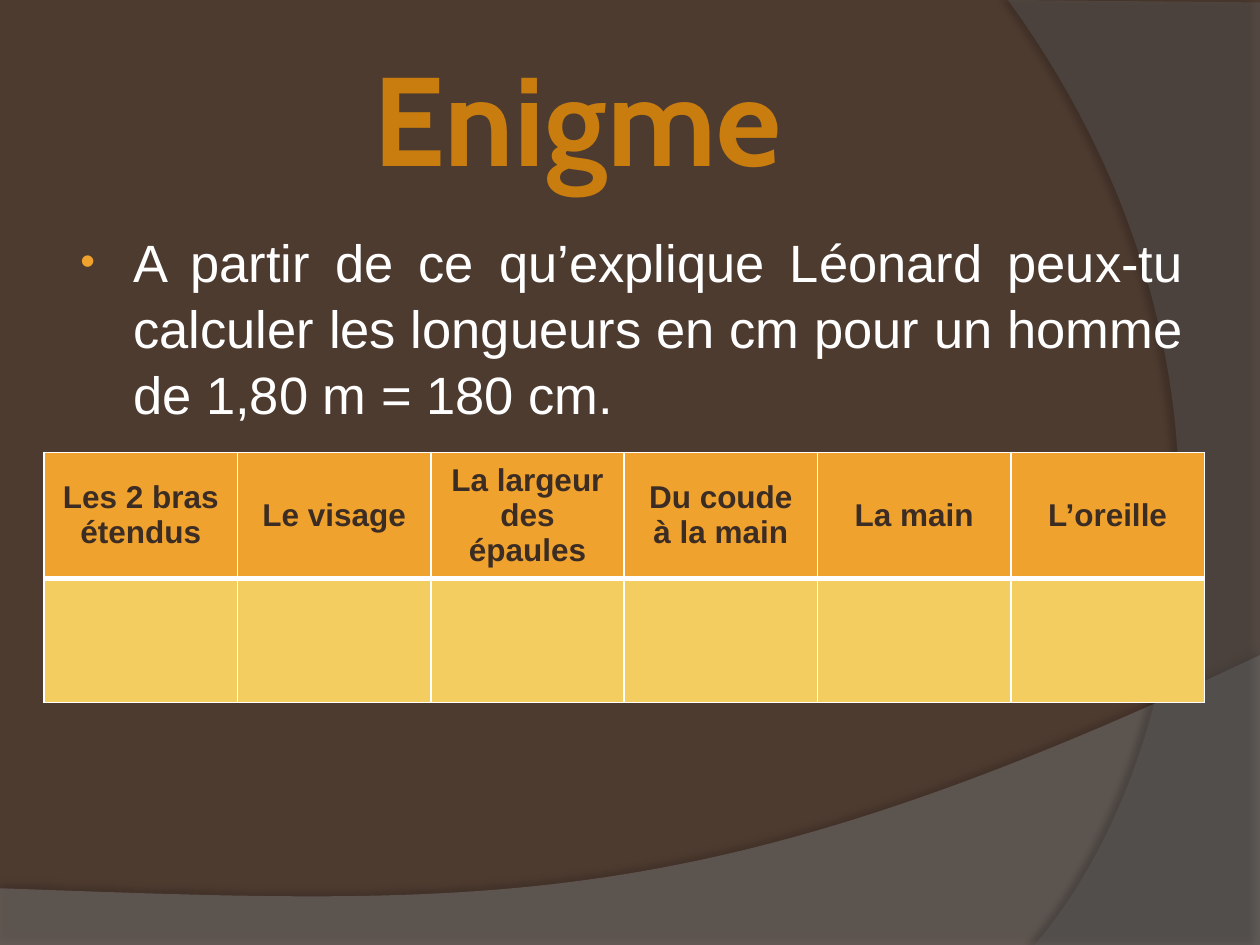
from lxml.etree import SubElement
from pptx import Presentation
from pptx.dml.color import RGBColor
from pptx.enum.text import MSO_ANCHOR as ANCHOR, PP_ALIGN as ALIGN
from pptx.oxml.ns import qn
from pptx.util import Inches, Pt

BACKGROUND, WHITE, ORANGE = "4E3B30", "FFFFFF", "F0A22E"
HEADINGS = ["Les 2 bras\nétendus", "Le visage", "La largeur des épaules",
            "Du coude à la main", "La main", "L’oreille"]


def paint(color, value):
    """Give a colour object a hex value."""
    color.rgb = RGBColor.from_string(value)


def add(parent, tag, **attrs):
    """Append a drawing element with attributes."""
    return SubElement(parent, qn(f"a:{tag}"), {k: str(v) for k, v in attrs.items()})


def write(tf, text, size, color, font="Arial", bold=False, align=ALIGN.CENTER, spacing=None):
    """Fill a text frame, one paragraph for each line."""
    for i, line in enumerate(text.split("\n")):
        p = tf.add_paragraph() if i else tf.paragraphs[0]
        p.alignment, p.line_spacing = align, spacing
        r = p.add_run()
        r.text = line
        r.font.size, r.font.name, r.font.bold = Pt(size), font, bold
        paint(r.font.color, color)


def curve(points, steps=60):
    """Return points along a cubic Bezier curve."""
    weights = [((1 - t) ** 3, 3 * t * (1 - t) ** 2, 3 * t * t * (1 - t), t ** 3)
               for t in (i / steps for i in range(steps + 1))]
    return [tuple(sum(w * p[axis] for w, p in zip(ws, points)) for axis in (0, 1))
            for ws in weights]


def add_wave(s, outline, color, opacity, shadow_opacity, distance, direction):
    """Draw a translucent curved area with a soft shadow."""
    points = [(Inches(x), Inches(y)) for x, y in outline]
    builder = s.shapes.build_freeform(*points[0], scale=1.0)
    builder.add_line_segments(points[1:], close=True)
    sp = builder.convert_to_shape()
    sp.shadow.inherit = False
    sp.fill.solid()
    paint(sp.fill.fore_color, color)
    sp.line.fill.background()
    props = sp.element.spPr
    add(props.find(f".//{qn('a:srgbClr')}"), "alpha", val=opacity * 1000)
    shadow = add(props.find(qn("a:effectLst")), "outerShdw", blurRad=Pt(4),
                 dist=Pt(distance), dir=direction * 60000, algn="ctr", rotWithShape=0)
    add(add(shadow, "srgbClr", val="000000"), "alpha", val=shadow_opacity * 1000)


def add_backdrop(s, width, height):
    """Draw the background and its two waves."""
    s.background.fill.solid()
    paint(s.background.fill.fore_color, BACKGROUND)
    floor = curve([(width, 5.2), (5.59, 7.29), (3.91, 7.19), (0, 7.05)])
    add_wave(s, [(0, height), (width, height)] + floor, "7F7F7F", 45, 35, 3.5, 270)
    side = curve([(8.21, height), (9.35, 6.19), (10.18, 3), (8, 0)])
    add_wave(s, [(width, 0.02), (width, height)] + side, "5E5E5E", 40, 45, 4, 180)


def add_text(s, box, text, size, color, anchor=ANCHOR.TOP, **style):
    """Place a wrapping text box and return its frame."""
    tf = s.shapes.add_textbox(*map(Inches, box)).text_frame
    tf.word_wrap, tf.vertical_anchor = True, anchor
    write(tf, text, size, color, **style)
    return tf


def add_question(s, box):
    """Place the bulleted, justified question."""
    text = ("A partir de ce qu’explique Léonard peux-tu calculer les longueurs "
            "en cm pour un homme de 1,80 m = 180 cm.")
    tf = add_text(s, box, text, 30, WHITE, align=ALIGN.JUSTIFY, spacing=1.05)
    props = tf.paragraphs[0]._p.get_or_add_pPr()
    props.set("marL", str(Inches(0.46)))
    props.set("indent", str(Inches(-0.42)))
    add(add(props, "buClr"), "srgbClr", val=ORANGE)
    add(props, "buSzPct", val=80000)
    add(props, "buFont", typeface="Arial")
    add(props, "buChar", char="•")


def style_cell(cell, fill, widths):
    """Fill a cell and give its sides white borders."""
    props = cell._tc.get_or_add_tcPr()
    for side, width in widths.items():
        line = add(props, f"ln{side}", w=Pt(width))
        add(add(line, "solidFill"), "srgbClr", val=WHITE)
    cell.fill.solid()
    paint(cell.fill.fore_color, fill)
    cell.vertical_anchor = ANCHOR.MIDDLE


def add_measures(s, box):
    """Place the table of body measures with an empty answer row."""
    table = s.shapes.add_table(2, len(HEADINGS), *map(Inches, box)).table
    for col, heading in enumerate(HEADINGS):
        head, answer = table.cell(0, col), table.cell(1, col)
        style_cell(head, ORANGE, {"L": 1, "R": 1, "T": 1, "B": 3})
        style_cell(answer, "F3CD60", {"L": 1, "R": 1, "T": 3, "B": 1})
        write(head.text_frame, heading, 18, "3B2C24", bold=True)


def main():
    """Build and save the slide."""
    prs = Presentation()
    prs.slide_width, prs.slide_height = Inches(10), Inches(7.5)
    s = prs.slides.add_slide(prs.slide_layouts[6])
    add_backdrop(s, 10, 7.5)
    add_text(s, (0.5, 0.3, 8.17, 1.25), "Enigme", 72, "C87D0E", ANCHOR.MIDDLE,
             font="Cabin", bold=True)
    add_question(s, (0.5, 1.75, 8.99, 4.95))
    add_measures(s, (0.35, 3.59, 9.21, 1.97))
    prs.save("out.pptx")


if __name__ == "__main__":
    main()
